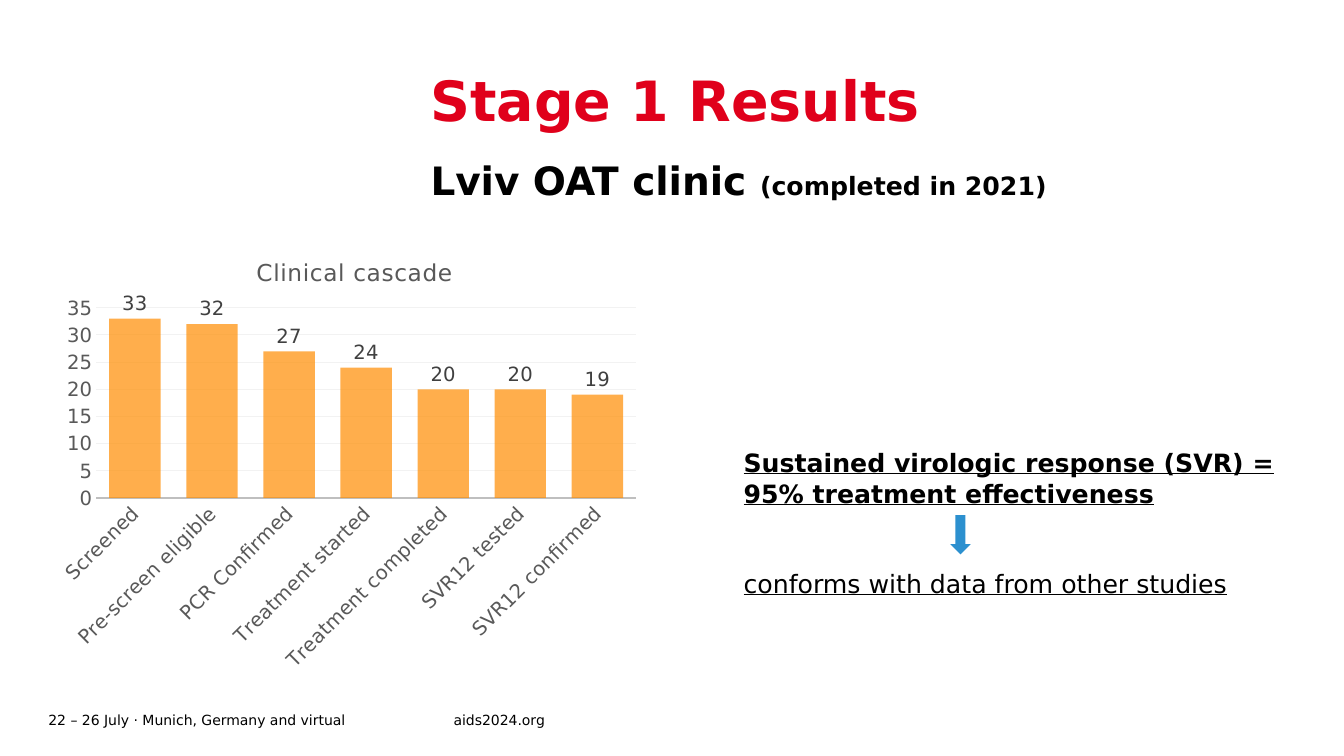
"""Build the Stage 1 Results slide with the clinical cascade chart."""
from lxml import etree
from pptx import Presentation
from pptx.chart.data import CategoryChartData
from pptx.dml.color import RGBColor
from pptx.enum.chart import XL_CHART_TYPE, XL_LABEL_POSITION, XL_TICK_MARK
from pptx.enum.shapes import MSO_SHAPE
from pptx.enum.text import MSO_ANCHOR
from pptx.oxml import parse_xml
from pptx.oxml.ns import nsdecls, qn
from pptx.util import Cm, Pt

COLUMN = XL_CHART_TYPE.COLUMN_CLUSTERED
OUTSIDE_END = XL_LABEL_POSITION.OUTSIDE_END
NO_TICK = XL_TICK_MARK.NONE
DOWN_ARROW = MSO_SHAPE.DOWN_ARROW
TOP, MIDDLE = MSO_ANCHOR.TOP, MSO_ANCHOR.MIDDLE
FONT = "DejaVu Sans"
COLORS = {
    "black": "000000", "red": "E0001B", "blue": "2C90CF", "orange": "FF8D00",
    "axis text": "595959", "label text": "404040", "axis": "BFBFBF", "grid": "F2F2F2",
}


def format_font(font, size, color="black", bold=False, underline=False):
    font.name = FONT
    font.size = Pt(size)
    font.bold = bold
    font.underline = underline
    font.color.rgb = RGBColor.from_string(COLORS[color])


def add_text(paragraphs, left, top, width, height, anchor=TOP, inset=(0, 0), spacing=None, gap=0):
    shape = slide.shapes.add_textbox(Cm(left), Cm(top), Cm(width), Cm(height))
    frame = shape.text_frame
    frame.word_wrap = True
    frame.vertical_anchor = anchor
    frame.margin_left = frame.margin_right = Cm(inset[0])
    frame.margin_top = frame.margin_bottom = Cm(inset[1])
    for index, runs in enumerate(paragraphs):
        paragraph = frame.add_paragraph() if index else frame.paragraphs[0]
        paragraph.line_spacing = spacing
        if index:
            paragraph.space_before = Pt(gap)
        for text, style in runs:
            run = paragraph.add_run()
            run.text = text
            format_font(run.font, **style)


presentation = Presentation()
presentation.slide_width = Cm(33.87)
presentation.slide_height = Cm(19.05)
slide = presentation.slides.add_slide(presentation.slide_layouts[6])

for text, left, width in (
    ("22 – 26 July · Munich, Germany and virtual", 1.22, 10.21),
    ("aids2024.org", 11.43, 4.9),
):
    add_text([[(text, {"size": 10})]], left, 17.83, width, 0.61, anchor=MIDDLE)

add_text(
    [
        [("Stage 1 Results", {"size": 39.6, "color": "red", "bold": True})],
        [
            ("Lviv OAT clinic ", {"size": 27.9, "bold": True}),
            ("(completed in 2021)", {"size": 18, "bold": True}),
        ],
    ],
    10.85, 0.84, 21.21, 3.4, spacing=1.5,
)

cascade = {
    "Screened": 33, "Pre-screen eligible": 32, "PCR Confirmed": 27, "Treatment started": 24,
    "Treatment completed": 20, "SVR12 tested": 20, "SVR12 confirmed": 19,
}
chart_data = CategoryChartData(number_format="0")
chart_data.categories = list(cascade)
chart_data.add_series("Series 1", list(cascade.values()))
chart = slide.shapes.add_chart(COLUMN, Cm(1.22), Cm(5.82), Cm(15.11), Cm(11.4), chart_data).chart
format_font(chart.font, 14)
chart.has_legend = False
chart.has_title = True
title = chart.chart_title
title.include_in_layout = False
title_run = title.text_frame.paragraphs[0].add_run()
title_run.text = "Clinical cascade"
format_font(title_run.font, 16.6, "axis text")
title_run.font._element.set("spc", "50")

plot = chart.plots[0]
plot.gap_width = 50
plot.overlap = 25
plot.vary_by_categories = False
bars = plot.series[0]
bars.format.fill.solid()
bars.format.fill.fore_color.rgb = RGBColor.from_string(COLORS["orange"])
bar_color = bars.format.fill._xPr.find(".//" + qn("a:srgbClr"))
etree.SubElement(bar_color, qn("a:alpha")).set("val", "70000")
labels = bars.data_labels
labels.show_value = True
labels.position = OUTSIDE_END
labels.number_format = "0"
labels.number_format_is_linked = False
format_font(labels.font, 14, "label text")

for axis in (chart.category_axis, chart.value_axis):
    axis.major_tick_mark = axis.minor_tick_mark = NO_TICK
    format_font(axis.tick_labels.font, 14, "axis text")
category_axis, value_axis = chart.category_axis, chart.value_axis
category_axis.format.line.color.rgb = RGBColor.from_string(COLORS["axis"])
category_axis.format.line.width = Pt(1.25)
category_axis._element.find(qn("c:txPr")).find(qn("a:bodyPr")).set("rot", "-2700000")
value_axis.minimum_scale, value_axis.maximum_scale, value_axis.major_unit = 0, 35, 5
value_axis.tick_labels.number_format = "0"
value_axis.tick_labels.number_format_is_linked = False
value_axis.format.line.fill.background()
grid_line = value_axis.major_gridlines.format.line
grid_line.color.rgb = RGBColor.from_string(COLORS["grid"])
grid_line.width = Pt(0.75)

plot_area = chart._chartSpace.chart.plotArea
for parent, target, place in (
    (plot_area, "inner", {"x": 0.08, "y": 0.17, "w": 0.9, "h": 0.42}),
    (title._element, None, {"x": 0.34, "y": 0.05}),
):
    for old_layout in parent.findall(qn("c:layout")):
        parent.remove(old_layout)
    parts = f'<c:layoutTarget val="{target}"/>' if target else ""
    parts += "".join(f'<c:{key}Mode val="edge"/>' for key in ("x", "y"))
    parts += "".join(f'<c:{key} val="{value}"/>' for key, value in place.items())
    layout = f'<c:layout {nsdecls("c")}><c:manualLayout>{parts}</c:manualLayout></c:layout>'
    parent.insert(0 if target else 1, parse_xml(layout))

add_text(
    [
        [("Sustained virologic response (SVR) = 95% treatment effectiveness",
          {"size": 18, "bold": True, "underline": True})],
        [("conforms with data from other studies", {"size": 18, "underline": True})],
    ],
    18.49, 11.15, 14.15, 5.64, inset=(0.25, 0.13), gap=43,
)

arrow = slide.shapes.add_shape(DOWN_ARROW, Cm(23.95), Cm(12.98), Cm(0.51), Cm(0.99))
arrow.shadow.inherit = False
arrow.fill.solid()
arrow.fill.fore_color.rgb = RGBColor.from_string(COLORS["blue"])
arrow.line.fill.background()

presentation.save("out.pptx")
